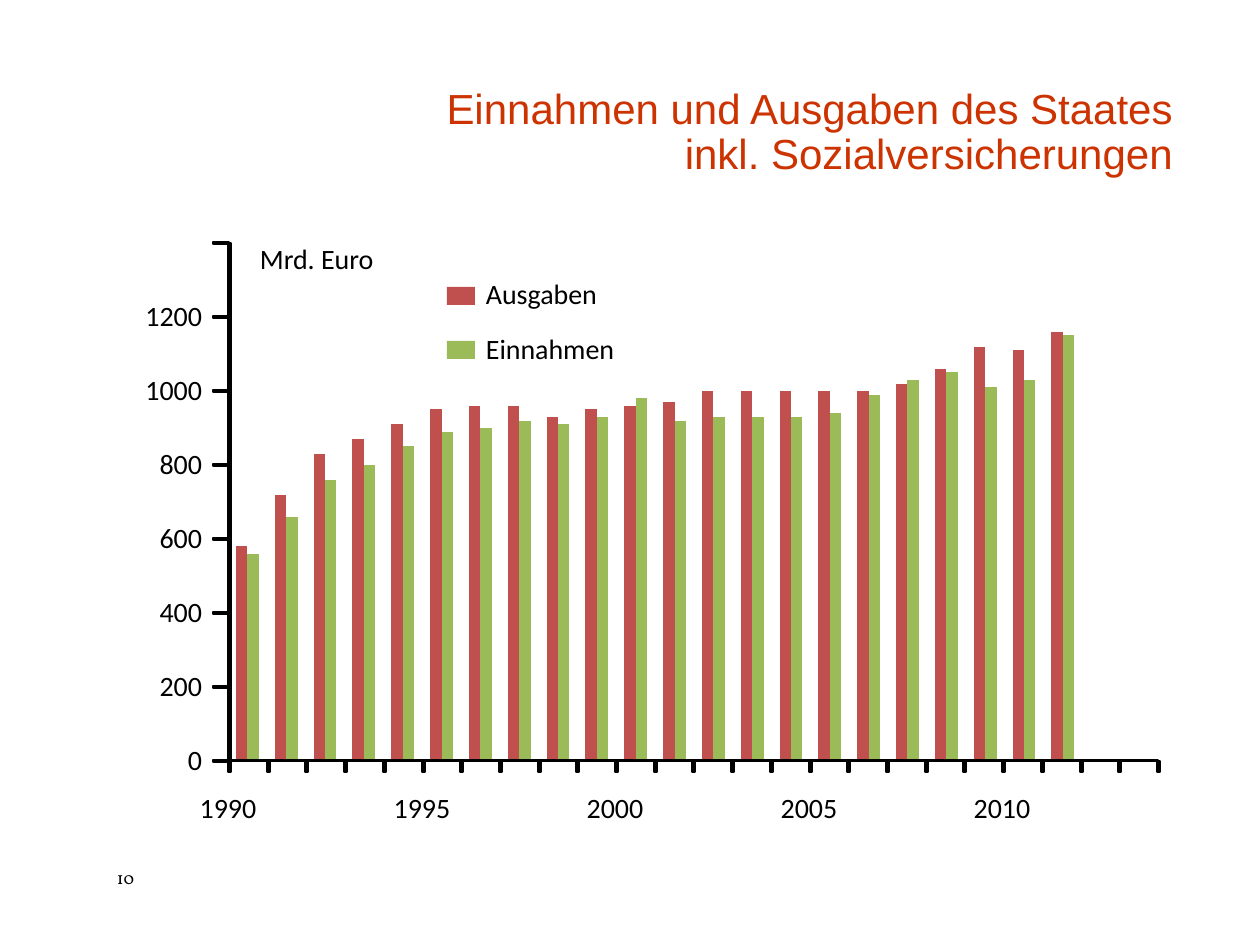
from pptx import Presentation
from pptx.chart.data import CategoryChartData
from pptx.dml.color import RGBColor
from pptx.enum.chart import XL_CHART_TYPE
from pptx.enum.shapes import MSO_SHAPE
from pptx.enum.text import MSO_ANCHOR, MSO_AUTO_SIZE, PP_ALIGN
from pptx.oxml import parse_xml
from pptx.oxml.ns import nsdecls
from pptx.util import Pt

PX = 914400 // 126  # EMU per pixel


def color(hex_value):
    return RGBColor.from_string(hex_value)


def add_label(text, left, top, width, align=PP_ALIGN.LEFT, font="Calibri", size=16):
    box = slide.shapes.add_textbox(left * PX, top * PX, width * PX, 34 * PX)
    frame = box.text_frame
    frame.word_wrap = True
    frame.margin_left = frame.margin_right = frame.margin_top = frame.margin_bottom = 0
    paragraph = frame.paragraphs[0]
    paragraph.text = text
    paragraph.alignment = align
    paragraph.font.name = font
    paragraph.font.size = Pt(size)
    paragraph.font.color.rgb = color("000000")


presentation = Presentation()
presentation.slide_width = 1260 * PX
presentation.slide_height = 945 * PX
slide = presentation.slides.add_slide(presentation.slide_layouts[5])

# Title
title = slide.shapes.title
title.left, title.top, title.width, title.height = 263 * PX, 53 * PX, 934 * PX, 132 * PX
title.text_frame.text = "Einnahmen und Ausgaben des Staates \vinkl. Sozialversicherungen "
title.text_frame.word_wrap = True
title.text_frame.auto_size = MSO_AUTO_SIZE.NONE
title.text_frame.vertical_anchor = MSO_ANCHOR.BOTTOM
paragraph = title.text_frame.paragraphs[0]
paragraph.alignment = PP_ALIGN.RIGHT
paragraph.line_spacing = 0.9
paragraph.font.name = "Arial"
paragraph.font.size = Pt(24)
paragraph.font.color.rgb = color("CC3300")

# Chart data in billions of euros; the last two years are still empty
series_colors = {"Ausgaben": "C0504D", "Einnahmen": "9BBB59"}
expenditure = [580, 720, 830, 870, 910, 950, 960, 960, 930, 950, 960, 970,
               1000, 1000, 1000, 1000, 1000, 1020, 1060, 1120, 1110, 1160]
revenue = [560, 660, 760, 800, 850, 890, 900, 920, 910, 930, 980, 920,
           930, 930, 930, 940, 990, 1030, 1050, 1010, 1030, 1150]
chart_data = CategoryChartData()
chart_data.categories = [str(year) for year in range(1990, 2014)]
for name, values in zip(series_colors, (expenditure, revenue)):
    chart_data.add_series(name, values + [None, None])

# Column chart
chart_left, chart_top, chart_width, chart_height = 190, 220, 990, 570
plot_left, plot_top, plot_width, plot_height = 228, 243, 932, 518
chart = slide.shapes.add_chart(
    XL_CHART_TYPE.COLUMN_CLUSTERED, chart_left * PX, chart_top * PX,
    chart_width * PX, chart_height * PX, chart_data).chart
chart.has_legend = False
chart.has_title = False
chart.font.name = "Calibri"
chart.font.size = Pt(16)
chart.font.color.rgb = color("000000")
plot = chart.plots[0]
plot.gap_width = 140
plot.overlap = 0
plot.vary_by_categories = False
for series in plot.series:
    series.format.fill.solid()
    series.format.fill.fore_color.rgb = color(series_colors[series.name])
chart.value_axis.minimum_scale = 0
chart.value_axis.maximum_scale = 1400
chart.value_axis.major_unit = 200
chart.value_axis.has_major_gridlines = False
chart.value_axis.visible = False
chart.category_axis.visible = False

# Fixed plot area inside the chart frame
plot_area = chart.value_axis._element.getparent()
for layout in plot_area.findall("{*}layout"):
    plot_area.remove(layout)
plot_area.insert(0, parse_xml(
    f'<c:layout {nsdecls("c")}><c:manualLayout><c:layoutTarget val="inner"/>'
    '<c:xMode val="edge"/><c:yMode val="edge"/>'
    f'<c:x val="{(plot_left - chart_left) / chart_width}"/>'
    f'<c:y val="{(plot_top - chart_top) / chart_height}"/>'
    f'<c:w val="{plot_width / chart_width}"/><c:h val="{plot_height / chart_height}"/>'
    '</c:manualLayout></c:layout>'))

# Axis lines, each followed by one outline holding all its tick marks
value_ticks = [(213, 242 + 74 * step, 16, 2) for step in range(8)]
year_ticks = [(228 + round(929 * step / 24), 761, 3, 11) for step in range(25)]
for axis_line, ticks in (((228, 243, 3, 518), value_ticks),
                         ((229, 760, 929, 2), year_ticks)):
    line = slide.shapes.add_shape(MSO_SHAPE.RECTANGLE, *(length * PX for length in axis_line))
    builder = slide.shapes.build_freeform(*ticks[0][:2], scale=PX)
    for left, top, width, height in ticks:
        builder.move_to(left, top)
        builder.add_line_segments([(left + width, top), (left + width, top + height),
                                   (left, top + height)], close=True)
    for shape in (line, builder.convert_to_shape()):
        shape.shadow.inherit = False
        shape.fill.solid()
        shape.fill.fore_color.rgb = color("000000")
        shape.line.color.rgb = color("000000")
        shape.line.width = Pt(0)

# Axis labels; years are centred on the tick marks
for value in range(0, 1201, 200):
    add_label(str(value), 142, 743 - value * 74 // 200, 60, PP_ALIGN.RIGHT)
for year in range(1990, 2011, 5):
    tick = 230 + round((year - 1990) * 929 / 24)
    add_label(str(year), tick - 42, 791, 80, PP_ALIGN.CENTER)
add_label("Mrd. Euro", 260, 242, 140)

# Legend
for row, (name, hex_value) in enumerate(series_colors.items()):
    swatch = slide.shapes.add_shape(
        MSO_SHAPE.RECTANGLE, 447 * PX, (287 + 54 * row) * PX, 28 * PX, 18 * PX)
    swatch.shadow.inherit = False
    swatch.fill.solid()
    swatch.fill.fore_color.rgb = color(hex_value)
    swatch.line.fill.background()
    add_label(name, 486, 277 + 55 * row, 150)

# Slide number
add_label("10", 117, 867, 60, font="Vollkorn", size=10)

presentation.save("out.pptx")
